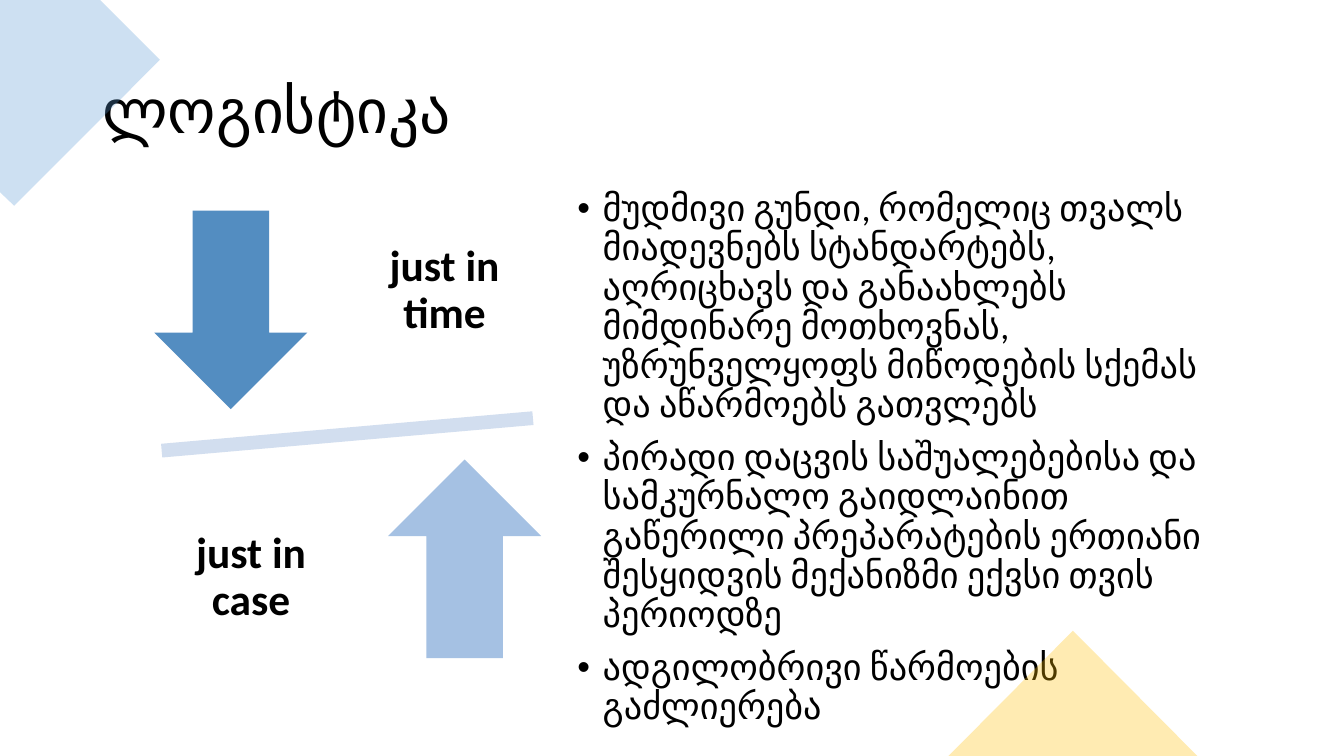
from dataclasses import dataclass

import pptx
import pptx.dml.color
import pptx.enum.shapes
import pptx.enum.text
import pptx.oxml
import pptx.oxml.ns
import pptx.presentation
import pptx.shapes.autoshape
import pptx.slide
import pptx.util

Pt = pptx.util.Pt
PRESET = pptx.enum.shapes.MSO_SHAPE
ANCHOR = pptx.enum.text.MSO_ANCHOR
ALIGN = pptx.enum.text.PP_ALIGN

COLOURS: dict[str, str] = {
    "text": "000000",
    "beam": "D2DEEF",
    "time": "538DC1",
    "case": "A5C1E3",
    "corner": "5B9BD5",
    "peak": "FFC000",
}
BULLET_INDENT = 18
CORNER_OUTLINE = [(0, 0), (71.5, 0), (114.3, 42.7), (10.2, 147), (0, 137.3)]


@dataclass(frozen=True)
class Figure:
    preset: pptx.enum.shapes.MSO_SHAPE
    box: tuple[float, float, float, float]
    colour: str
    rotation: float = 0
    opacity: int = 100


@dataclass(frozen=True)
class Passage:
    box: tuple[float, float, float, float]
    paragraphs: tuple[str, ...]
    size: float
    frame_format: dict
    paragraph_format: dict
    bold: bool = False
    bulleted: bool = False


def apply_format(target: object, values: dict) -> None:
    for name, value in values.items():
        setattr(target, name, value)


def paint(shape: pptx.shapes.autoshape.Shape, colour: str, opacity: int = 100) -> None:
    shape.shadow.inherit = False
    shape.line.fill.background()
    shape.fill.solid()
    shape.fill.fore_color.rgb = pptx.dml.color.RGBColor.from_string(COLOURS[colour])
    if opacity < 100:
        tint = shape.fill._xPr.find(".//" + pptx.oxml.ns.qn("a:srgbClr"))
        alpha = tint.makeelement(pptx.oxml.ns.qn("a:alpha"), {"val": str(opacity * 1000)})
        tint.append(alpha)


def draw_figure(slide: pptx.slide.Slide, figure: Figure) -> None:
    shape = slide.shapes.add_shape(figure.preset, *map(Pt, figure.box))
    shape.rotation = figure.rotation
    paint(shape, figure.colour, figure.opacity)


def draw_corner(slide: pptx.slide.Slide) -> None:
    outline = [(Pt(x), Pt(y)) for x, y in CORNER_OUTLINE]
    builder = slide.shapes.build_freeform(*outline[0])
    builder.add_line_segments(outline[1:], close=True)
    paint(builder.convert_to_shape(), "corner", 30)


def add_bullet(paragraph: pptx.text.text._Paragraph) -> None:
    properties = paragraph._p.get_or_add_pPr()
    properties.set("marL", str(Pt(BULLET_INDENT)))
    properties.set("indent", str(-Pt(BULLET_INDENT)))
    for tag, values in (("a:buFont", {"typeface": "Arial"}), ("a:buChar", {"char": "•"})):
        properties.append(properties.makeelement(pptx.oxml.ns.qn(tag), values))


def write_passage(slide: pptx.slide.Slide, passage: Passage) -> None:
    frame = slide.shapes.add_textbox(*map(Pt, passage.box)).text_frame
    apply_format(frame, {"word_wrap": True} | passage.frame_format)
    for index, wording in enumerate(passage.paragraphs):
        paragraph = frame.add_paragraph() if index else frame.paragraphs[0]
        apply_format(paragraph, {"line_spacing": 0.9} | passage.paragraph_format)
        if passage.bulleted:
            add_bullet(paragraph)
        run = paragraph.add_run()
        run.text = wording
        apply_format(run.font, {"name": "Calibri", "size": Pt(passage.size), "bold": passage.bold})
        run.font.color.rgb = pptx.dml.color.RGBColor.from_string(COLOURS["text"])


def strategy(left: float, top: float, wording: str) -> Passage:
    margins = {f"margin_{side}": Pt(17.36) for side in ("left", "top", "right", "bottom")}
    return Passage(
        (left, top, 116.6, 149),
        (wording,),
        31,
        {"vertical_anchor": ANCHOR.MIDDLE} | margins,
        {"alignment": ALIGN.CENTER},
        bold=True,
    )


TITLE = Passage(
    (66, 28.75, 828, 104.4), ("ლოგისტიკა",), 44, {"vertical_anchor": ANCHOR.MIDDLE}, {}
)
MEASURES = Passage(
    (405.4, 132.5, 488.9, 355),
    (
        "მუდმივი გუნდი, რომელიც თვალს მიადევნებს სტანდარტებს, აღრიცხავს და განაახლებს "
        "მიმდინარე მოთხოვნას, უზრუნველყოფს მიწოდების სქემას და აწარმოებს გათვლებს",
        "პირადი დაცვის საშუალებებისა და სამკურნალო გაიდლაინით გაწერილი პრეპარატების "
        "ერთიანი შესყიდვის მექანიზმი ექვსი თვის პერიოდზე",
        "ადგილობრივი წარმოების გაძლიერება",
    ),
    25.9,
    {"vertical_anchor": ANCHOR.TOP},
    {"space_before": Pt(10)},
    bulleted=True,
)
BALANCE = (
    Figure(PRESET.MATH_MINUS, (67, 289.4, 362.2, 41.8), "beam", rotation=355),
    Figure(PRESET.DOWN_ARROW, (110.2, 150.5, 109.4, 141.8), "time"),
    strategy(259.2, 133.2, "just in time"),
    Figure(PRESET.UP_ARROW, (277.2, 328.3, 109.4, 141.8), "case"),
    strategy(121, 338.4, "just in case"),
)
PEAK = Figure(PRESET.ISOSCELES_TRIANGLE, (677.5, 450.5, 177.8, 89.5), "peak", opacity=30)


def main() -> None:
    deck = pptx.Presentation()
    apply_format(deck, {"slide_width": Pt(960), "slide_height": Pt(540)})
    slide = deck.slides.add_slide(deck.slide_layouts[6])
    for part in (TITLE, *BALANCE, MEASURES):
        if isinstance(part, Figure):
            draw_figure(slide, part)
        else:
            write_passage(slide, part)
    draw_corner(slide)
    draw_figure(slide, PEAK)
    deck.save("out.pptx")


if __name__ == "__main__":
    main()
